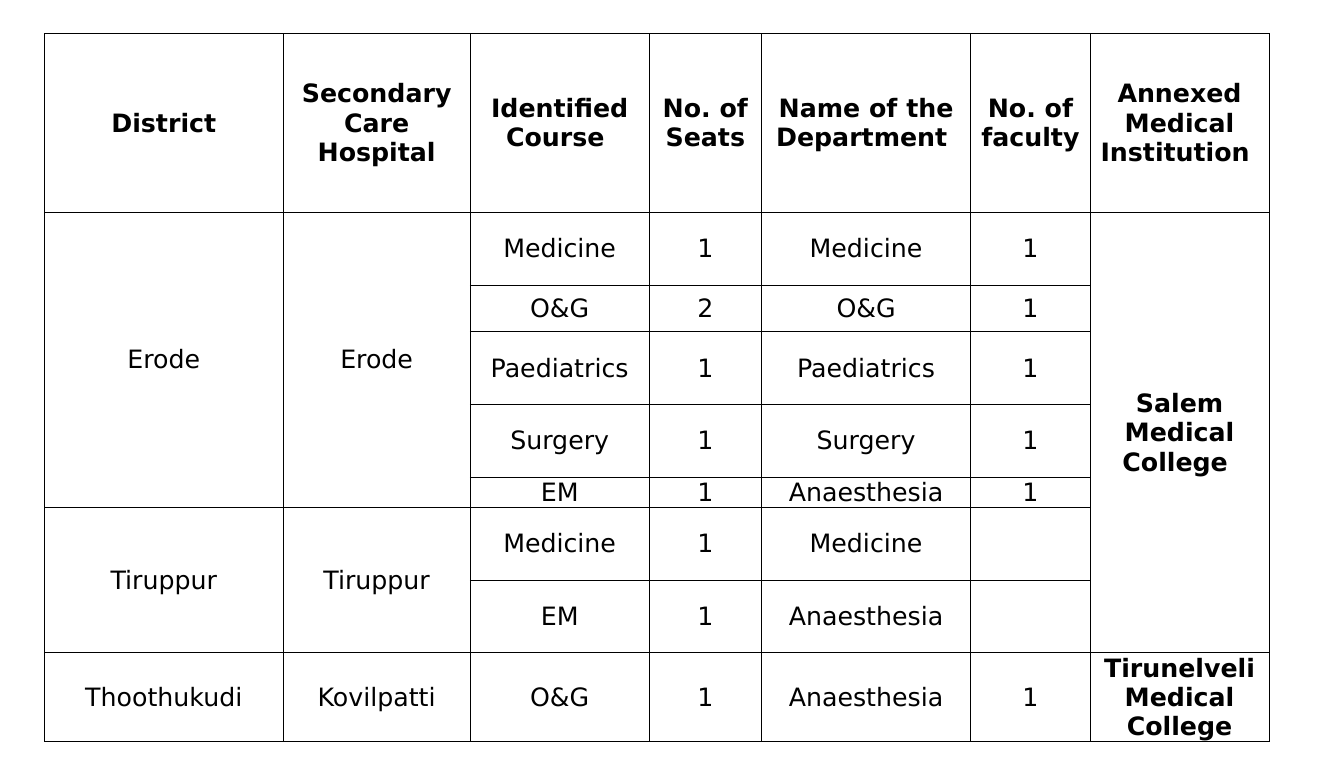
from itertools import product
from lxml.etree import SubElement
from pptx import Presentation
from pptx.dml.color import RGBColor
from pptx.enum.text import MSO_ANCHOR, PP_ALIGN
from pptx.oxml.ns import qn
from pptx.util import Inches, Pt

BLACK = RGBColor(0, 0, 0)
WHITE = RGBColor(255, 255, 255)
FONT = "DejaVu Sans"
COLS = [2.36, 1.85, 1.77, 1.11, 2.07, 1.18, 1.77]
ROWS = [1.77, 0.72, 0.46, 0.72, 0.72, 0.3, 0.72, 0.72, 0.87]
HEADS = ["District", "Secondary Care Hospital", "Identified Course ",
         "No. of Seats", "Name of the Department ", "No. of faculty",
         "Annexed Medical Institution "]
BODY = [
    ["Erode", "Erode", "Medicine", "1", "Medicine", "1", "Salem Medical College "],
    ["", "", "O&G", "2", "O&G", "1", ""],
    ["", "", "Paediatrics", "1", "Paediatrics", "1", ""],
    ["", "", "Surgery", "1", "Surgery", "1", ""],
    ["", "", "EM", "1", "Anaesthesia", "1", ""],
    ["Tiruppur", "Tiruppur", "Medicine", "1", "Medicine", "", ""],
    ["", "", "EM", "1", "Anaesthesia", "", ""],
    ["Thoothukudi", "Kovilpatti", "O&G", "1", "Anaesthesia", "1",
     "Tirunelveli Medical College"],
]
SPANS = [(0, 1, 5), (1, 1, 5), (0, 6, 7), (1, 6, 7), (6, 1, 7)]


def edge(cell):
    props = cell._tc.get_or_add_tcPr()
    for side in ("lnL", "lnR", "lnT", "lnB"):
        line = SubElement(props, qn(f"a:{side}"), w=str(Pt(0.5)))
        fill = SubElement(line, qn("a:solidFill"))
        SubElement(fill, qn("a:srgbClr"), val=str(BLACK))


def style(cell, text, bold):
    cell.margin_left = cell.margin_right = cell.margin_top = Inches(0.01)
    cell.margin_bottom = 0
    cell.vertical_anchor = MSO_ANCHOR.MIDDLE
    edge(cell)
    cell.fill.solid()
    cell.fill.fore_color.rgb = WHITE
    cell.text = text
    para = cell.text_frame.paragraphs[0]
    para.alignment = PP_ALIGN.CENTER
    font = para.font
    font.name, font.size, font.bold = FONT, Pt(18), bold
    font.color.rgb = BLACK


def seats(slide, left, top, width, height):
    frame = slide.shapes.add_table(len(ROWS), len(COLS), left, top, width, height)
    table = frame.table
    table.first_row = table.horz_banding = False
    for col, share in zip(table.columns, COLS):
        col.width = int(width * share / sum(COLS))
    for row, share in zip(table.rows, ROWS):
        row.height = int(height * share / sum(ROWS))
    data = [HEADS] + BODY
    for row, col in product(range(len(ROWS)), range(len(COLS))):
        bold = row == 0 or col == len(COLS) - 1
        style(table.cell(row, col), data[row][col], bold)
    for col, first, last in SPANS:
        table.cell(first, col).merge(table.cell(last, col))


def main():
    deck = Presentation()
    deck.slide_width, deck.slide_height = Inches(13.3), Inches(7.5)
    slide = deck.slides.add_slide(deck.slide_layouts[6])
    seats(slide, Inches(0.44), Inches(0.33), Inches(12.12), Inches(7))
    deck.save("out.pptx")


if __name__ == "__main__":
    main()
